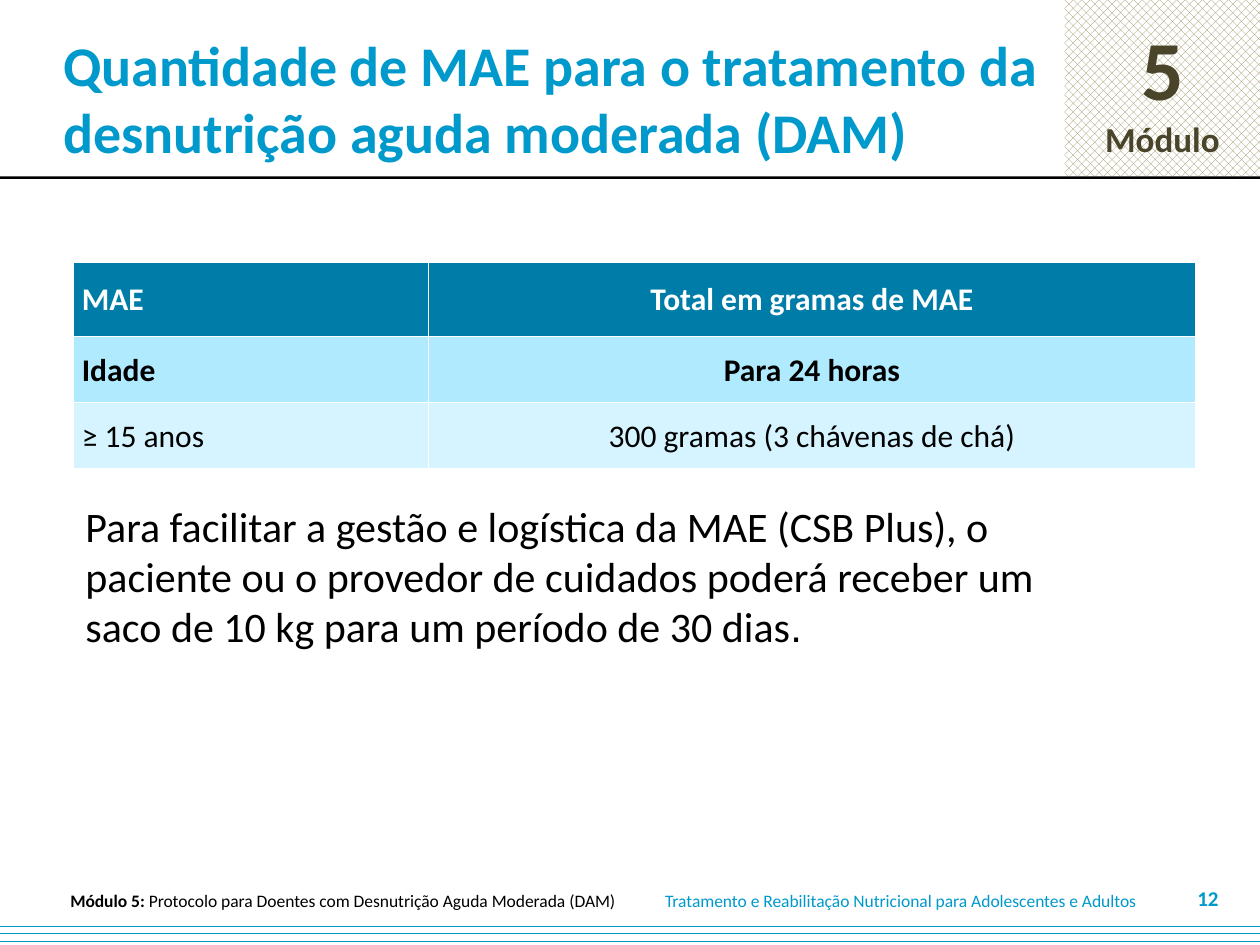
from dataclasses import dataclass

from lxml import etree
from pptx import Presentation
from pptx import util as u
from pptx.dml.color import RGBColor
from pptx.enum import dml, shapes, text
from pptx.oxml.ns import qn

WIDTH, HEIGHT = u.Inches(10), u.Inches(7.5)
COLUMNS, ROWS = 100, 75


@dataclass(frozen=True)
class Theme:
    font: str = "Calibri"
    stop_font: str = "Arial"
    accent: str = "0099CC"
    ink: str = "000000"
    paper: str = "FFFFFF"
    badge_ink: str = "4A452A"
    badge_hatch: str = "948A54"
    table_fills: tuple = ("007CA8", "AFEAFF", "D5F4FF")
    number: int = 48
    title: int = 32
    body: int = 24
    module: int = 20
    table: int = 18
    page: int = 12
    footer: int = 10


THEME = Theme()
ALIGN = text.PP_ALIGN
ANCHOR = text.MSO_ANCHOR
PATTERN = dml.MSO_PATTERN


def across(columns):
    return round(WIDTH * columns / COLUMNS)


def down(rows):
    return round(HEIGHT * rows / ROWS)


def place(left, top, width, height):
    return across(left), down(top), across(width), down(height)


def rgb(color):
    return RGBColor.from_string(color)


def add_span(para, words, size, color, bold=False, font=THEME.font):
    span = para.add_run()
    span.text = words
    span.font.name = font
    span.font.size = u.Pt(size)
    span.font.bold = bold
    span.font.color.rgb = rgb(color)


def add_text(page, area, spans, align=ALIGN.LEFT, anchor=ANCHOR.MIDDLE, wrap=True):
    frame = page.shapes.add_textbox(*place(*area)).text_frame
    frame.word_wrap = wrap
    frame.vertical_anchor = anchor
    para = frame.paragraphs[0]
    para.alignment = align
    for span in spans:
        add_span(para, *span)
    return frame


def add_block(page, area, color, pattern=None):
    block = page.shapes.add_shape(shapes.MSO_SHAPE.RECTANGLE, *place(*area))
    block.shadow.inherit = False
    block.line.fill.background()
    if pattern is None:
        block.fill.solid()
        block.fill.fore_color.rgb = rgb(color)
    else:
        block.fill.patterned()
        block.fill.pattern = pattern
        block.fill.fore_color.rgb = rgb(color)
        block.fill.back_color.rgb = rgb(THEME.paper)
    return block


def add_badge(page, area, lines):
    frame = add_block(page, area, THEME.badge_hatch, PATTERN.PERCENT_50).text_frame
    frame.vertical_anchor = ANCHOR.MIDDLE
    for index, (words, size) in enumerate(lines):
        para = frame.add_paragraph() if index else frame.paragraphs[0]
        para.alignment = ALIGN.CENTER
        add_span(para, words, size, THEME.badge_ink, True)


def add_borders(cell):
    properties = cell._tc.get_or_add_tcPr()
    for side in ("lnL", "lnR", "lnT", "lnB"):
        line = etree.SubElement(properties, qn(f"a:{side}"), w=str(u.Pt(1)))
        fill = etree.SubElement(line, qn("a:solidFill"))
        etree.SubElement(fill, qn("a:srgbClr"), val=THEME.paper)


def fill_cell(cell, words, fill, color, bold, align):
    add_borders(cell)
    cell.fill.solid()
    cell.fill.fore_color.rgb = rgb(fill)
    cell.vertical_anchor = ANCHOR.MIDDLE
    cell.margin_left = cell.margin_right = across(0.7)
    cell.margin_top = cell.margin_bottom = 0
    para = cell.text_frame.paragraphs[0]
    para.alignment = align
    para.line_spacing = 1.05
    add_span(para, words, THEME.table, color, bold)


def add_ration_table(page, left, top, widths, heights, rows):
    area = place(left, top, sum(widths), sum(heights))
    table = page.shapes.add_table(len(rows), len(widths), *area).table
    for column, width in zip(table.columns, widths):
        column.width = across(width)
    for row, height in zip(table.rows, heights):
        row.height = down(height)
    for index, (words, fill) in enumerate(zip(rows, THEME.table_fills)):
        color = THEME.ink if index else THEME.paper
        bold = index < len(rows) - 1
        for cell, entry, align in zip(table.rows[index].cells, words, (ALIGN.JUSTIFY, ALIGN.CENTER)):
            fill_cell(cell, entry, fill, color, bold, align)


def add_header(page):
    add_badge(page, (84.5, 0, 15.5, 14), [("5", THEME.number), ("Módulo", THEME.module)])
    add_block(page, (0, 14, COLUMNS, 0.2), THEME.ink)
    title = "Quantidade de MAE para o tratamento da desnutrição aguda moderada (DAM)"
    frame = add_text(page, (0, 0, 85.8, 15.5), [(title, THEME.title, THEME.accent, True)])
    frame.margin_left = across(5)


def add_footer(page):
    add_block(page, (0, 72.9, COLUMNS, 2.1), THEME.accent, PATTERN.DASHED_HORIZONTAL)
    course = "Tratamento e Reabilitação Nutricional para Adolescentes e Adultos"
    add_text(page, (51.8, 70.5, 40.5, 2), [(course, THEME.footer, THEME.accent)], wrap=False)
    module = [
        ("Módulo 5: ", THEME.footer, THEME.ink, True),
        ("Protocolo para Doentes com Desnutrição Aguda Moderada (DAM)", THEME.footer, THEME.ink),
    ]
    add_text(page, (2.9, 70.5, 48.6, 2), module, ALIGN.CENTER, wrap=False)
    add_text(page, (92.7, 70, 5, 2.5), [("12", THEME.page, THEME.accent, True)], ALIGN.RIGHT)


def add_content(page):
    rows = [
        ("MAE", "Total em gramas de MAE"),
        ("Idade", "Para 24 horas"),
        ("≥ 15 anos", "300 gramas (3 chávenas de chá)"),
    ]
    add_ration_table(page, 5.8, 20.8, (28.2, 60.9), (5.9, 5.25, 5.25), rows)
    advice = (
        "Para facilitar a gestão e logística da MAE (CSB Plus), o paciente ou o provedor "
        "de cuidados poderá receber um saco de 10 kg para um período de 30 dias"
    )
    spans = [
        (advice, THEME.body, THEME.ink),
        (".", THEME.body, THEME.ink, False, THEME.stop_font),
    ]
    frame = add_text(page, (5.8, 39.2, 83.3, 13.1), spans, anchor=ANCHOR.TOP)
    frame.paragraphs[0].space_after = u.Pt(10)


def main():
    deck = Presentation()
    deck.slide_width, deck.slide_height = WIDTH, HEIGHT
    page = deck.slides.add_slide(deck.slide_layouts[6])
    add_header(page)
    add_footer(page)
    add_content(page)
    deck.save("out.pptx")


if __name__ == "__main__":
    main()
